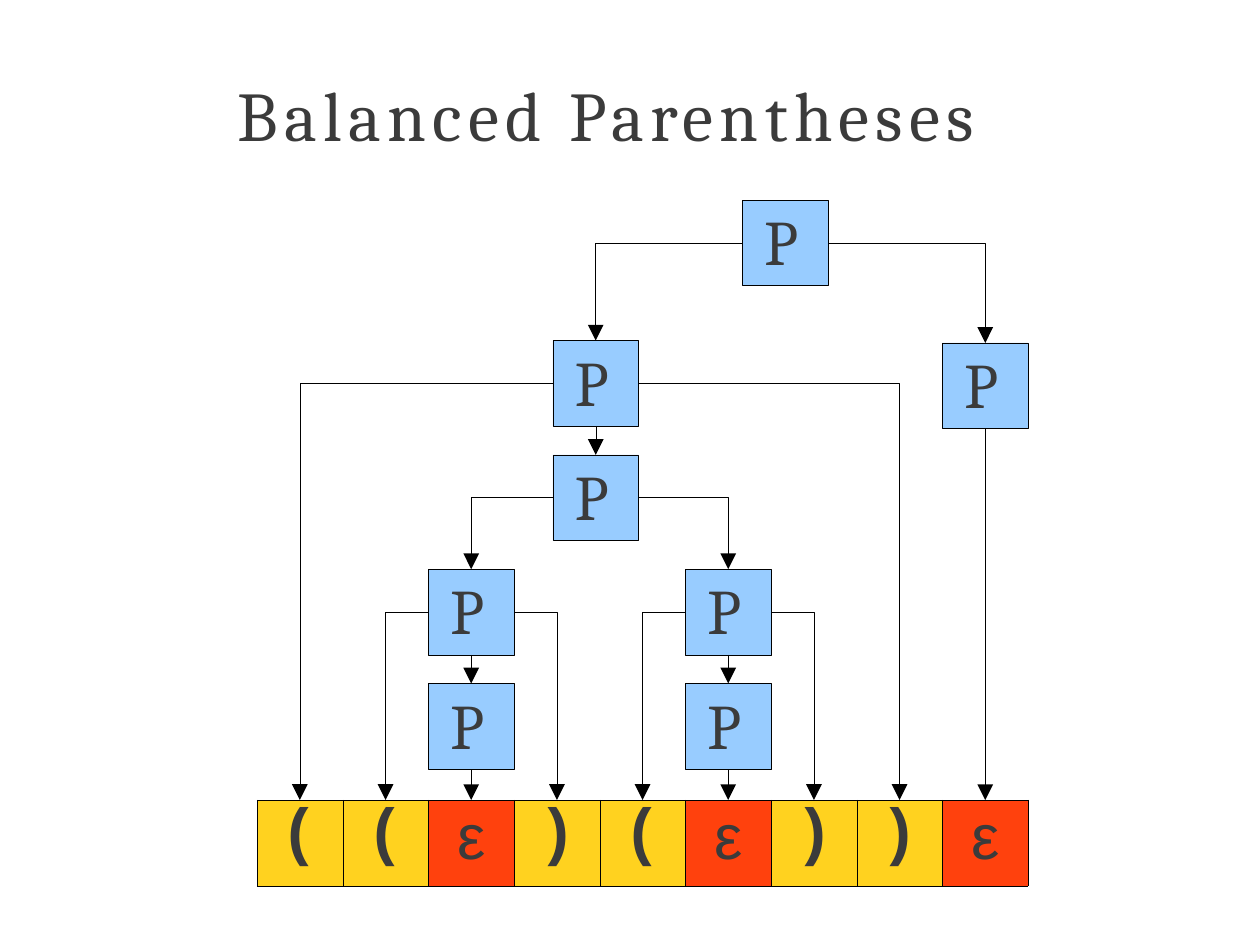
from lxml import etree
from pptx import Presentation
from pptx.dml.color import RGBColor
from pptx.enum import shapes, text
from pptx.oxml.ns import qn
from pptx.util import Inches, Pt

CELL = 0.75
TOKENS = "((ε)(ε))ε"
TOKENS_TOP = 5.25
NODES = {
    "root": (4.25, 0),
    "outer": (2.59, 1.23),
    "last": (6, 1.25),
    "pair": (2.59, 2.23),
    "first": (1.5, 3.23),
    "second": (3.75, 3.23),
    "first empty": (1.5, 4.23),
    "second empty": (3.75, 4.23),
}
CHILDREN = {
    "root": ("outer", "last"),
    "outer": (0, "pair", 7),
    "last": (8,),
    "pair": ("first", "second"),
    "first": (1, "first empty", 3),
    "second": (4, "second empty", 6),
    "first empty": (2,),
    "second empty": (5,),
}


def color(value):
    """Return the colour for a hex string."""
    return RGBColor.from_string(value)


def write(frame, words, size=40, font="Cambria", bold=False, spacing=0,
          align=text.PP_ALIGN.LEFT, line_spacing=None):
    """Write one formatted paragraph into a text frame."""
    paragraph = frame.paragraphs[0]
    paragraph.alignment = align
    if line_spacing:
        paragraph.line_spacing = Pt(line_spacing)
    run = paragraph.add_run()
    run.text = words
    run.font.size = Pt(size)
    run.font.name = font
    run.font.bold = bold
    run.font.color.rgb = color("3B3B3B")
    run.font._element.set("spc", str(round(spacing * 100)))


def set_margins(holder, left=0, top=0):
    """Set the margins of a text frame or table cell."""
    holder.margin_left = Inches(left)
    holder.margin_top = Inches(top)
    holder.margin_right = holder.margin_bottom = 0


def style_line(shape):
    """Give a shape a thin black line."""
    shape.line.color.rgb = color("000000")
    shape.line.width = Pt(0.25)


def draw_title(slide, left, top, width, height):
    """Place and format the title."""
    title = slide.shapes.title
    title.left, title.top = Inches(left), Inches(top)
    title.width, title.height = Inches(width), Inches(height)
    frame = title.text_frame
    frame.auto_size = text.MSO_AUTO_SIZE.NONE
    frame.vertical_anchor = text.MSO_ANCHOR.TOP
    set_margins(frame, 0.01, 0.02)
    write(frame, "Balanced Parentheses", size=44, spacing=3.95)


def draw_node(slide, left, top):
    """Draw one square labelled P."""
    node = slide.shapes.add_shape(shapes.MSO_SHAPE.RECTANGLE, Inches(left),
                                  Inches(top), Inches(CELL), Inches(CELL))
    node.shadow.inherit = False
    node.fill.solid()
    node.fill.fore_color.rgb = color("98CCFF")
    style_line(node)
    frame = node.text_frame
    frame.vertical_anchor = text.MSO_ANCHOR.TOP
    set_margins(frame, 0.19, 0.02)
    write(frame, "P", spacing=4.2)


def draw_arrow(slide, parent, child):
    """Draw an arrow from a parent's nearest side to a child's top."""
    half = CELL / 2
    end_x, end_y = Inches(child[0] + half), Inches(child[1])
    if parent[0] == child[0]:
        arrow = slide.shapes.add_connector(
            shapes.MSO_CONNECTOR.STRAIGHT, end_x, Inches(parent[1] + CELL),
            end_x, end_y)
    else:
        start_x = Inches(parent[0] + (CELL if child[0] > parent[0] else 0))
        start_y = Inches(parent[1] + half)
        builder = slide.shapes.build_freeform(start_x, start_y)
        builder.add_line_segments([(end_x, start_y), (end_x, end_y)], close=False)
        arrow = builder.convert_to_shape()
        arrow.fill.background()
    style_line(arrow)
    etree.SubElement(arrow.get_or_add_ln(), qn("a:tailEnd"),
                     type="triangle", w="lg", len="lg")
    etree.SubElement(arrow._element.spPr, qn("a:effectLst"))


def set_borders(cell):
    """Give a table cell thin black borders."""
    properties = cell._tc.get_or_add_tcPr()
    for index, side in enumerate(("lnL", "lnR", "lnT", "lnB")):
        border = etree.Element(qn(f"a:{side}"), w=str(Pt(0.25)))
        fill = etree.SubElement(border, qn("a:solidFill"))
        etree.SubElement(fill, qn("a:srgbClr"), val="000000")
        properties.insert(index, border)


def draw_tokens(slide, left, top):
    """Draw the row of parsed symbols."""
    table = slide.shapes.add_table(
        1, len(TOKENS), Inches(left), Inches(top),
        Inches(CELL * len(TOKENS)), Inches(CELL)).table
    table.first_row = table.horz_banding = False
    for cell, token in zip(table.iter_cells(), TOKENS):
        empty = token == "ε"
        cell.fill.solid()
        cell.fill.fore_color.rgb = color("FF410D" if empty else "FFD21F")
        set_borders(cell)
        if empty:
            set_margins(cell, 0, 0.02)
            write(cell.text_frame, token, font="Arial", align=text.PP_ALIGN.CENTER)
        else:
            set_margins(cell, 0.21)
            write(cell.text_frame, token, font="Courier New", bold=True,
                  line_spacing=45.6)


def draw_parse_tree(slide, left, top):
    """Draw the nodes, the symbols below them and the arrows between."""
    places = {name: (left + x, top + y) for name, (x, y) in NODES.items()}
    for place in places.values():
        draw_node(slide, *place)
    draw_tokens(slide, left, top + TOKENS_TOP)
    for index in range(len(TOKENS)):
        places[index] = (left + CELL * index, top + TOKENS_TOP)
    for parent, children in CHILDREN.items():
        for child in children:
            draw_arrow(slide, places[parent], places[child])


def main():
    """Build and save the slide."""
    presentation = Presentation()
    presentation.slide_width = Inches(11.03)
    presentation.slide_height = Inches(8.26)
    slide = presentation.slides.add_slide(presentation.slide_layouts[5])
    draw_title(slide, 2.07, 0.61, 6.87, 0.76)
    draw_parse_tree(slide, 2.25, 1.75)
    presentation.save("out.pptx")


if __name__ == "__main__":
    main()
